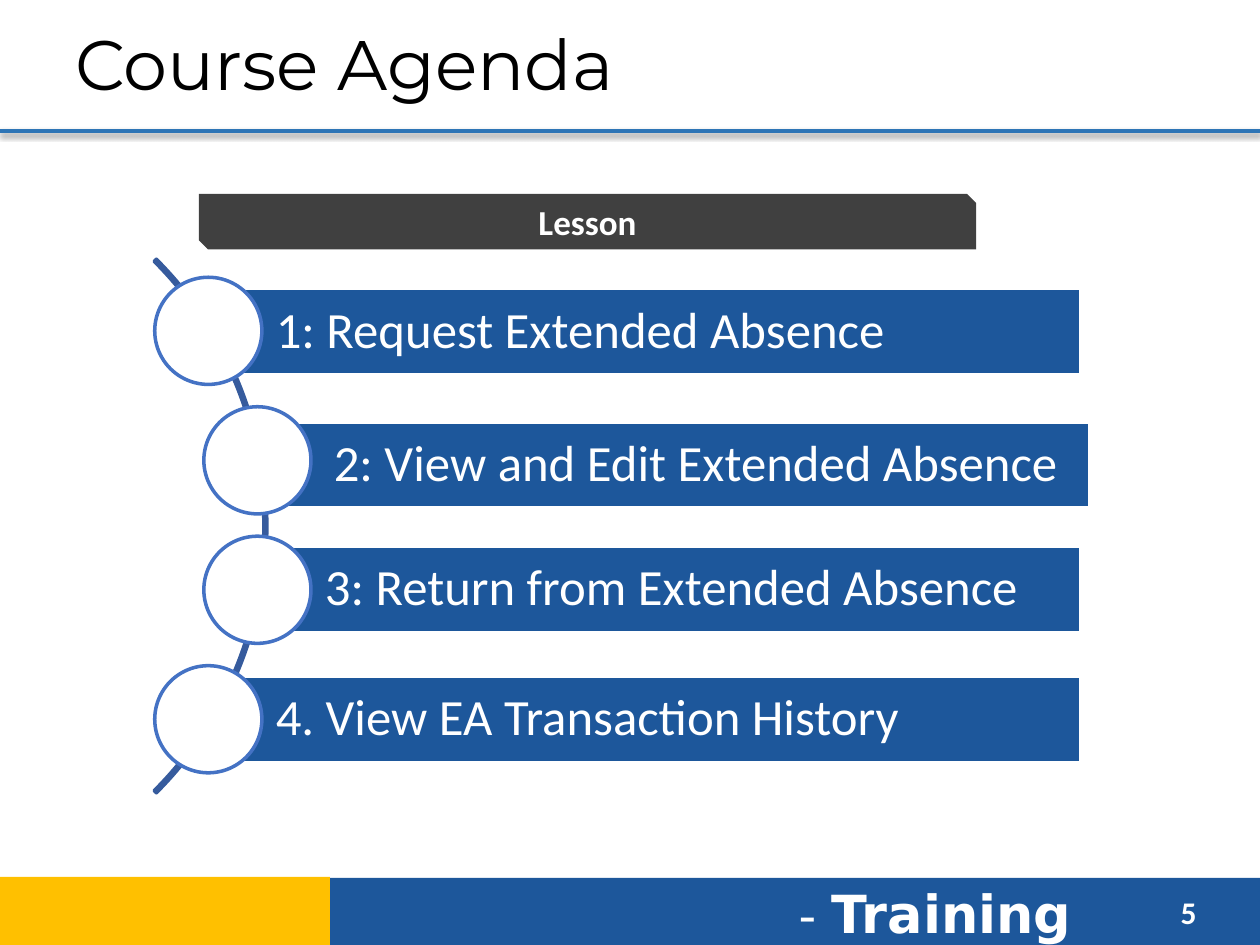
import pptx
import pptx.util
import pptx.dml.color
import pptx.enum.shapes
import pptx.enum.text
import pptx.oxml
import pptx.oxml.ns

Cm, Pt = pptx.util.Cm, pptx.util.Pt
KIND = pptx.enum.shapes.MSO_SHAPE
ALIGN = pptx.enum.text.PP_ALIGN
ANCHOR = pptx.enum.text.MSO_ANCHOR

HUES = {"blue": "1D579B", "gold": "FFC000", "rule": "2E75B6", "arc": "365B9D",
        "ring": "4472C4", "dark": "404040", "white": "FFFFFF", "black": "000000"}

# Lessons: text, bar left, top and width, circle left (cm)
ROWS = [("1: Request Extended Absence", 4.19, 5.82, 17.6, 3.12),
        ("2: View and Edit Extended Absence", 5.36, 8.51, 16.61, 4.11),
        ("3: Return from Extended Absence", 5.18, 11.02, 16.61, 4.11),
        ("4. View EA Transaction History", 4.19, 13.64, 17.6, 3.12)]
BAR_H = 1.73
DOT, DOT_TOP, DOT_STEP = 2.16, 5.59, 2.61


def hue(name):
    return pptx.dml.color.RGBColor.from_string(HUES[name])


def apply(item, form):
    for key, value in form.items():
        setattr(item, key, value)


def add_shape(slide, kind, box, fill=None, line=None):
    shape = slide.shapes.add_shape(kind, *map(Cm, box))
    shape.shadow.inherit = False
    for part, name in ((shape.fill, fill), (shape.line.fill, line)):
        if name:
            part.solid()
            part.fore_color.rgb = hue(name)
        else:
            part.background()
    if line:
        shape.line.width = Pt(2)
    return shape


def write(shape, runs, frame=None, para=None):
    """Fill a shape with one paragraph of (text, colour, font values) runs."""
    body = shape.text_frame
    apply(body, {"word_wrap": True, **(frame or {})})
    first = body.paragraphs[0]
    apply(first, {"alignment": ALIGN.LEFT, **(para or {})})
    for text, name, form in runs:
        run = first.add_run()
        run.text = text
        apply(run.font, form)
        run.font.color.rgb = hue(name)


def add_text(slide, box, runs, **frame):
    write(slide.shapes.add_textbox(*map(Cm, box)), runs, frame)


def add_rule(slide, top):
    rule = slide.shapes.add_connector(
        pptx.enum.shapes.MSO_CONNECTOR.STRAIGHT, 0, Cm(top), Cm(25.4), Cm(top))
    rule.line.color.rgb = hue("rule")
    rule.line.width = Pt(2.25)
    glow = (f'<a:effectLst {pptx.oxml.ns.nsdecls("a")}>'
            f'<a:outerShdw blurRad="{Pt(3.1)}" dist="{Pt(1.6)}" dir="5400000">'
            f'<a:srgbClr val="{HUES["black"]}"><a:alpha val="38000"/></a:srgbClr>'
            '</a:outerShdw></a:effectLst>')
    rule._element.spPr.append(pptx.oxml.parse_xml(glow))


def add_row(slide, rank, text, left, top, width, dot):
    bar = add_shape(slide, KIND.RECTANGLE, (left, top, width, BAR_H), "blue", "white")
    pad = {"margin_" + side: Cm(0.2) for side in ("top", "right", "bottom")}
    write(bar, [(text, "white", {"size": Pt(29), "name": "Calibri"})],
          {"vertical_anchor": ANCHOR.MIDDLE, "margin_left": Cm(1.37), **pad},
          {"line_spacing": 0.9})
    add_shape(slide, KIND.OVAL, (dot, DOT_TOP + rank * DOT_STEP, DOT, DOT),
              "white", "ring")


def main():
    deck = pptx.Presentation()
    apply(deck, {"slide_width": Cm(25.4), "slide_height": Cm(19.05)})
    slide = deck.slides.add_slide(deck.slide_layouts[6])

    # Footer
    add_shape(slide, KIND.RECTANGLE, (6.63, 17.7, 18.77, 1.4), "blue")
    add_text(slide, (15.85, 17.63, 7.11, 1.55),
             [("- ", "white", {"size": Pt(28), "name": "DejaVu Sans"}),
              ("Training", "white",
               {"size": Pt(30), "name": "DejaVu Sans", "bold": True})])
    add_text(slide, (23.55, 17.88, 1.52, 1.02),
             [("5", "white", {"size": Pt(18), "name": "Calibri", "bold": True})])
    add_shape(slide, KIND.RECTANGLE, (-0.03, 17.68, 6.68, 1.4), "gold")

    # Title
    add_rule(slide, 2.64)
    add_text(slide, (1.27, 0.08, 22.86, 2.36),
             [("Course Agenda", "black", {"size": Pt(40), "name": "Montserrat"})],
             vertical_anchor=ANCHOR.MIDDLE)

    # Arc behind the lessons
    arc = add_shape(slide, KIND.BLOCK_ARC, (-9.83, 3, 15.21, 15.21), line="arc")
    for rank, value in enumerate((189, 27, 0.004)):
        arc.adjustments[rank] = value

    # Lessons
    for rank, row in enumerate(ROWS):
        add_row(slide, rank, *row)

    # Heading over the lessons
    head = add_shape(slide, KIND.SNIP_2_DIAG_RECTANGLE,
                     (4.01, 3.91, 15.67, 1.12), "dark")
    write(head, [("Lesson", "white",
                  {"size": Pt(20), "name": "Calibri", "bold": True})],
          {"vertical_anchor": ANCHOR.MIDDLE}, {"alignment": ALIGN.CENTER})

    deck.save("out.pptx")


if __name__ == "__main__":
    main()
